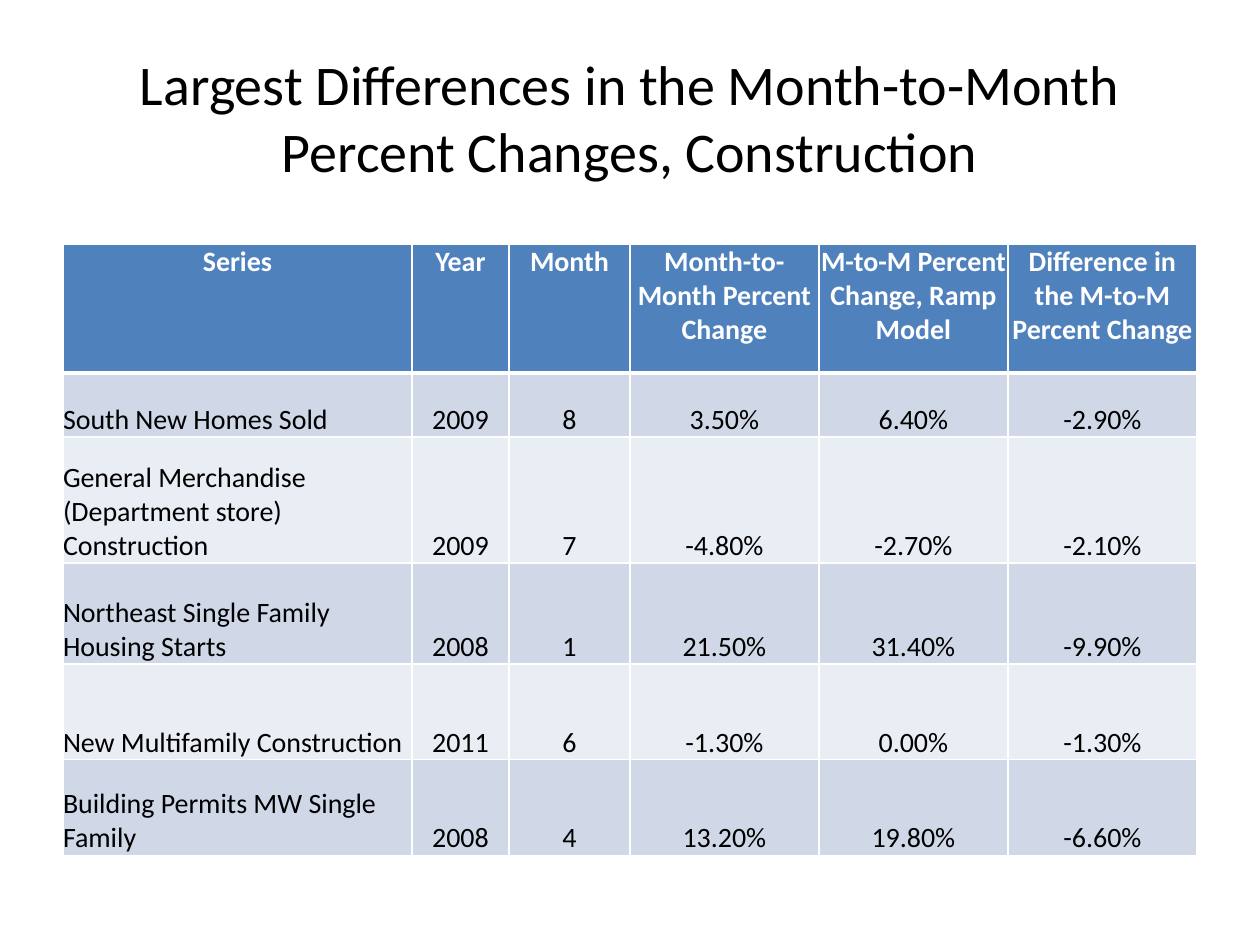
import pptx
import pptx.dml.color
import pptx.enum.text
import pptx.oxml
import pptx.oxml.ns
import pptx.util

Inches, Pt = pptx.util.Inches, pptx.util.Pt
RGBColor = pptx.dml.color.RGBColor
PP_ALIGN = pptx.enum.text.PP_ALIGN
MSO_ANCHOR = pptx.enum.text.MSO_ANCHOR

BLACK = RGBColor(0x00, 0x00, 0x00)
WHITE = RGBColor(0xFF, 0xFF, 0xFF)
HEADER_BLUE = RGBColor(0x4F, 0x81, 0xBD)
BANDS = [RGBColor(0xD0, 0xD8, 0xE8), RGBColor(0xE9, 0xED, 0xF4)]

TITLE_FONT = {"name": "Calibri", "size": Pt(32), "bold": False}
HEADER_FONT = {"name": "Calibri", "size": Pt(16), "bold": True}
BODY_FONT = {"name": "Calibri", "size": Pt(16), "bold": False}

TITLE = "Largest Differences in the Month-to-Month Percent Changes, Construction"
COL_WIDTHS = [2.77, 0.77, 0.96, 1.5, 1.5, 1.5]
ROW_HEIGHTS = [1.02, 0.51, 1, 0.8, 0.76, 0.76]
ROWS = [
    ["Series", "Year", "Month", "Month-to-Month Percent Change",
     "M-to-M Percent Change, Ramp Model", "Difference in the M-to-M Percent Change"],
    ["South New Homes Sold", "2009", "8", "3.50%", "6.40%", "-2.90%"],
    ["General Merchandise (Department store) Construction", "2009", "7",
     "-4.80%", "-2.70%", "-2.10%"],
    ["Northeast Single Family Housing Starts", "2008", "1", "21.50%", "31.40%", "-9.90%"],
    ["New Multifamily Construction", "2011", "6", "-1.30%", "0.00%", "-1.30%"],
    ["Building Permits MW Single Family", "2008", "4", "13.20%", "19.80%", "-6.60%"],
]


def write(tf, text, font, color, align):
    p = tf.paragraphs[0]
    p.alignment = align
    r = p.add_run()
    r.text = text
    for name, value in font.items():
        setattr(r.font, name, value)
    r.font.color.rgb = color


def set_borders(cell, widths):
    """Draw white cell borders; widths maps a side (L, R, T, B) to points."""
    tc_pr = cell._tc.get_or_add_tcPr()
    for i, (side, width) in enumerate(widths.items()):
        ln = pptx.oxml.parse_xml(
            f'<a:ln{side} {pptx.oxml.ns.nsdecls("a")} w="{Pt(width)}">'
            f'<a:solidFill><a:srgbClr val="{WHITE}"/></a:solidFill></a:ln{side}>')
        tc_pr.insert(i, ln)


def add_title(slide, x, y, w, h):
    tf = slide.shapes.add_textbox(Inches(x), Inches(y), Inches(w), Inches(h)).text_frame
    tf.word_wrap = True
    tf.vertical_anchor = MSO_ANCHOR.MIDDLE
    write(tf, TITLE, TITLE_FONT, BLACK, PP_ALIGN.CENTER)


def add_changes_table(slide, x, y, w, h):
    table = slide.shapes.add_table(len(ROWS), len(COL_WIDTHS), Inches(x), Inches(y),
                                   Inches(w), Inches(h)).table
    for col, width in zip(table.columns, COL_WIDTHS):
        col.width = Inches(width)
    for row, height in zip(table.rows, ROW_HEIGHTS):
        row.height = Inches(height)

    for i, values in enumerate(ROWS):
        header = i == 0
        for j, text in enumerate(values):
            cell = table.cell(i, j)
            for side in ("left", "right", "top", "bottom"):
                setattr(cell, f"margin_{side}", 0)
            cell.vertical_anchor = MSO_ANCHOR.TOP if header else MSO_ANCHOR.BOTTOM
            cell.fill.solid()
            cell.fill.fore_color.rgb = HEADER_BLUE if header else BANDS[(i - 1) % 2]
            # The rule under the header is heavier
            set_borders(cell, {"L": 1, "R": 1, "T": 3 if i == 1 else 1,
                               "B": 3 if header else 1})
            # Series names are left aligned, everything else is centred
            align = PP_ALIGN.LEFT if j == 0 and not header else PP_ALIGN.CENTER
            write(cell.text_frame, text, HEADER_FONT if header else BODY_FONT,
                  WHITE if header else BLACK, align)


def main():
    prs = pptx.Presentation()
    prs.slide_width, prs.slide_height = Inches(10), Inches(7.5)
    slide = prs.slides.add_slide(prs.slide_layouts[6])
    add_title(slide, 0.5, 0.3, 9, 1.25)
    add_changes_table(slide, 0.5, 1.94, 9, 4.85)
    prs.save("out.pptx")


if __name__ == "__main__":
    main()
